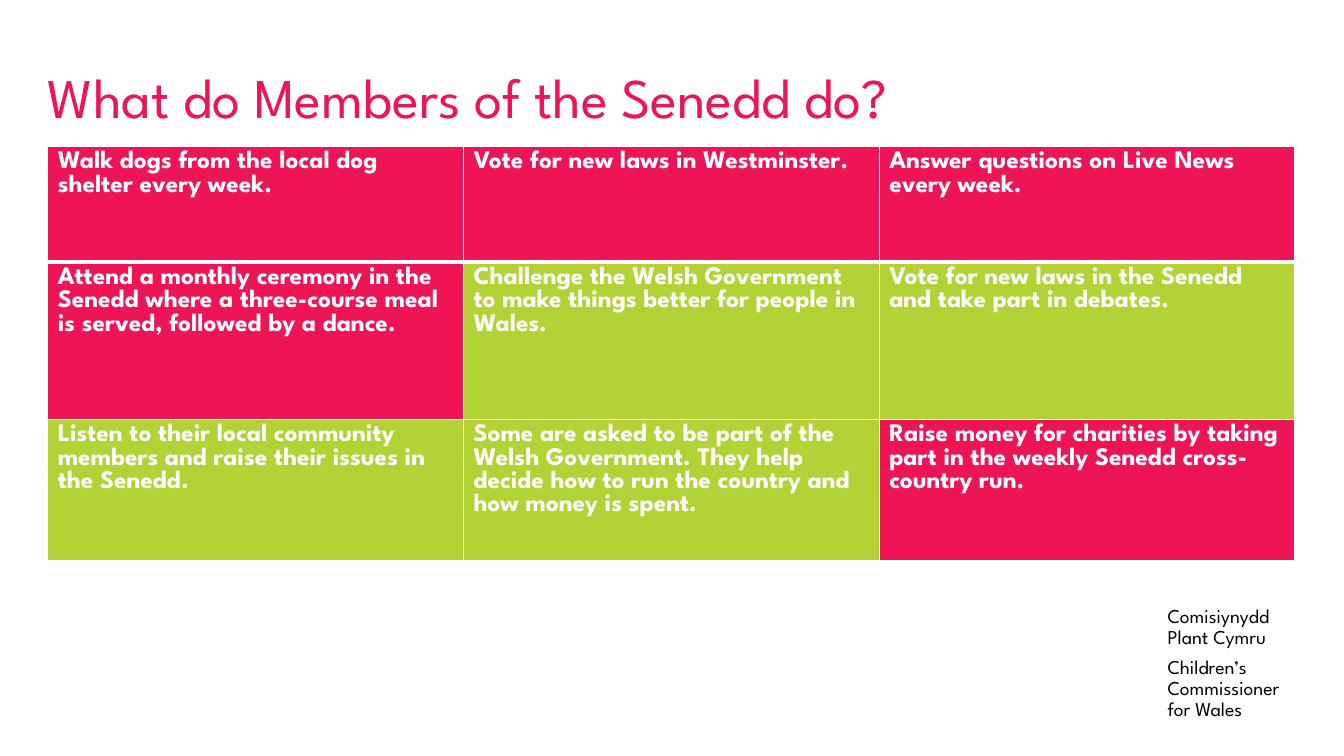
from dataclasses import dataclass

from lxml import etree
from pptx import Presentation
from pptx import util as u
from pptx.dml import color
from pptx.enum import text
from pptx.oxml import ns


@dataclass(frozen=True)
class Theme:
    font: str = "League Spartan"
    pink: str = "ED1556"
    green: str = "B3D235"
    white: str = "FFFFFF"
    black: str = "000000"
    title_size: int = 40
    answer_size: int = 18
    footer_size: int = 14
    thin_rule: int = 1
    header_rule: int = 3


def write(frame, *paragraphs, font, size, ink, bold=False, spacing=1.0, gap=0):
    for index, words in enumerate(paragraphs):
        line = frame.paragraphs[0] if index == 0 else frame.add_paragraph()
        line.text = words
        line.alignment = text.PP_ALIGN.LEFT
        line.line_spacing = spacing
        line.space_before = u.Pt(gap if index else 0)
        for run in line.runs:
            run.font.name = font
            run.font.size = u.Pt(size)
            run.font.bold = bold
            run.font.color.rgb = color.RGBColor.from_string(ink)


class SlideBuilder:
    def __init__(self, deck, theme):
        self.deck = deck
        self.theme = theme
        self.slide = deck.slides.add_slide(deck.slide_layouts[5])

    def across(self, percent):
        return u.Emu(round(self.deck.slide_width * percent / 100))

    def down(self, percent):
        return u.Emu(round(self.deck.slide_height * percent / 100))

    def area(self, left, top, width, height):
        return self.across(left), self.down(top), self.across(width), self.down(height)

    def frame_of(self, holder, anchor):
        frame = holder.text_frame
        frame.word_wrap = True
        frame.auto_size = text.MSO_AUTO_SIZE.NONE
        frame.vertical_anchor = anchor
        frame.margin_left = frame.margin_right = 0
        frame.margin_top = frame.margin_bottom = 0
        return frame

    def title(self, words, *area):
        heading = self.slide.shapes.title
        heading.left, heading.top, heading.width, heading.height = self.area(*area)
        write(self.frame_of(heading, text.MSO_ANCHOR.TOP), words, font=self.theme.font,
              size=self.theme.title_size, ink=self.theme.pink, spacing=0.9)

    def footer(self, names, *area):
        signature = self.slide.shapes.add_textbox(*self.area(*area))
        write(self.frame_of(signature, text.MSO_ANCHOR.MIDDLE), *names, font=self.theme.font,
              size=self.theme.footer_size, ink=self.theme.black, spacing=0.9, gap=6)

    def border(self, cell, side, points):
        properties = cell._tc.get_or_add_tcPr()
        edge = etree.SubElement(properties, ns.qn(f"a:ln{side}"), w=str(u.Pt(points)))
        fill = etree.SubElement(edge, ns.qn("a:solidFill"))
        etree.SubElement(fill, ns.qn("a:srgbClr"), val=self.theme.white)

    def answer_grid(self, answers, row_shares, left, top, width):
        area = self.area(left, top, width, sum(row_shares))
        grid = self.slide.shapes.add_table(len(answers), len(answers[0]), *area).table
        grid.first_row = grid.horz_banding = False
        for row, share in zip(grid.rows, row_shares):
            row.height = self.down(share)
        for r, row_answers in enumerate(answers):
            for c, (words, is_true) in enumerate(row_answers):
                self.answer(grid.cell(r, c), words, is_true, r)

    def answer(self, cell, words, is_true, row):
        theme = self.theme
        above = theme.header_rule if row == 1 else theme.thin_rule
        below = theme.header_rule if row == 0 else theme.thin_rule
        for side, points in zip("LRTB", (theme.thin_rule, theme.thin_rule, above, below)):
            self.border(cell, side, points)
        cell.fill.solid()
        cell.fill.fore_color.rgb = color.RGBColor.from_string(
            theme.green if is_true else theme.pink)
        write(cell.text_frame, words, font=theme.font, size=theme.answer_size,
              ink=theme.white, bold=True)


ANSWERS = [
    [("Walk dogs from the local dog shelter every week.", False),
     ("Vote for new laws in Westminster.", False),
     ("Answer questions on Live News every week.", False)],
    [("Attend a monthly ceremony in the Senedd where a three-course meal is served, "
      "followed by a dance.", False),
     ("Challenge the Welsh Government to make things better for people in Wales.", True),
     ("Vote for new laws in the Senedd and take part in debates.", True)],
    [("Listen to their local community members and raise their issues in the Senedd.", True),
     ("Some are asked to be part of the Welsh Government. They help decide how to run "
      "the country and how money is spent.", True),
     ("Raise money for charities by taking part in the weekly Senedd cross-country run.",
      False)],
]


def main():
    deck = Presentation()
    deck.slide_width, deck.slide_height = u.Inches(13.33), u.Inches(7.5)
    senedd = SlideBuilder(deck, Theme())
    margin = 3.55
    senedd.footer(["Comisiynydd\nPlant Cymru", "Children’s\nCommissioner\nfor Wales"],
                  86.87, 80.13, 10.35, 15.33)
    senedd.title("What do Members of the Senedd do?", margin, 9.33, 84.55, 8.13)
    senedd.answer_grid(ANSWERS, [15.33, 20.8, 18.67], margin, 19.33, 92.8)
    deck.save("out.pptx")


if __name__ == "__main__":
    main()
